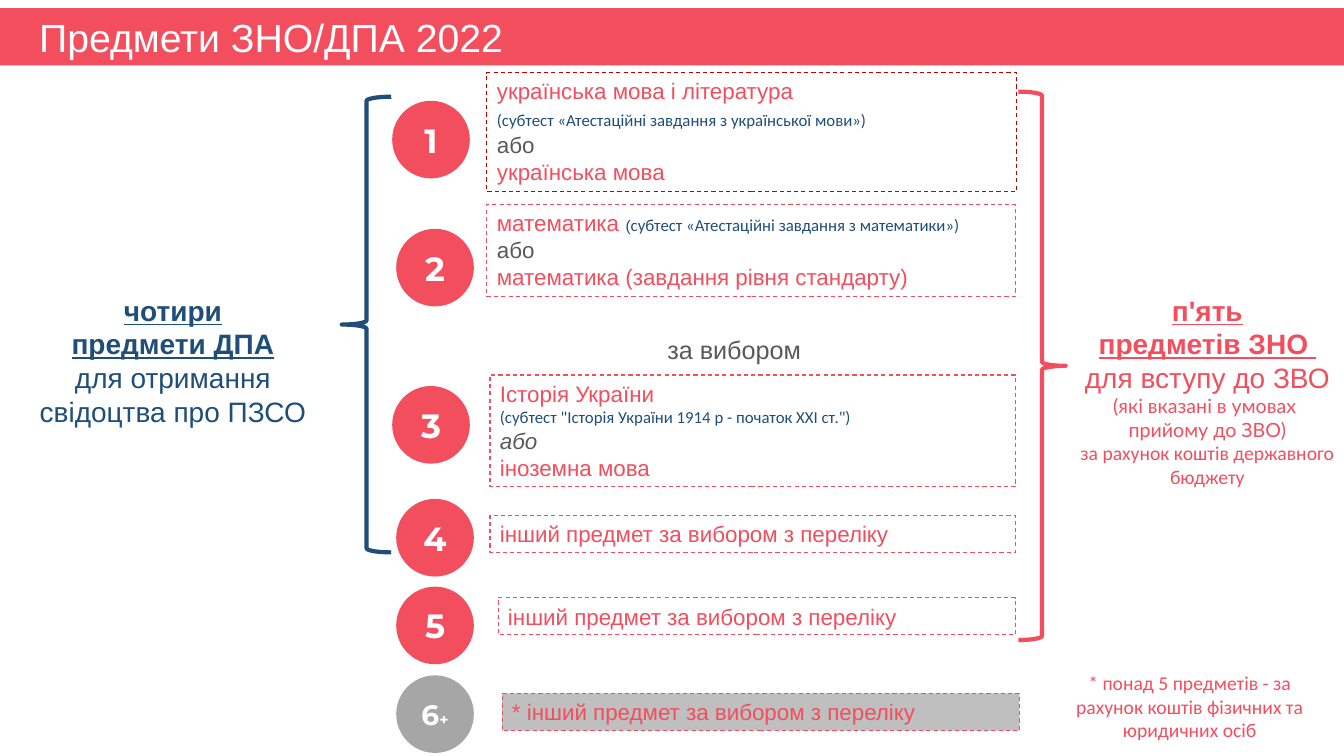
from collections import namedtuple

from lxml import etree
from pptx import Presentation
from pptx.dml.color import RGBColor
from pptx.enum import dml, shapes, text
from pptx.oxml import ns
from pptx.util import Inches, Pt

RED = RGBColor(0xF2, 0x4E, 0x5E)
DARK_RED = RGBColor(0xC0, 0x00, 0x00)
NAVY = RGBColor(0x1F, 0x4E, 0x79)
DARK_GRAY = RGBColor(0x59, 0x59, 0x59)
MID_GRAY = RGBColor(0xA6, 0xA6, 0xA6)
LIGHT_GRAY = RGBColor(0xBF, 0xBF, 0xBF)
WHITE = RGBColor(0xFF, 0xFF, 0xFF)

Style = namedtuple("Style", "size font color bold italic underline", defaults=(False, False, False))
TITLE = Style(28, "Arial", WHITE)
SUBJECT = Style(16, "Arial", RED)
OR = Style(16, "Arial", DARK_GRAY)
OR_ITALIC = OR._replace(italic=True)
SUBTEST = Style(12, "Calibri", NAVY)
CHOICE = Style(18, "Arial", DARK_GRAY)
DPA = Style(20, "Arial", NAVY)
DPA_HEAD = DPA._replace(bold=True, underline=True)
ZNO = Style(20, "Arial", RED)
ZNO_HEAD = ZNO._replace(bold=True, underline=True)
ZNO_NOTE = Style(14, "Lato", RED)
FOOTNOTE = Style(14, "Calibri", RED)
NUMBER = Style(24, "Montserrat", WHITE, bold=True)

# Text is a list of paragraphs, each a list of (words, style) runs.
OTHER_SUBJECT = [[("інший предмет за вибором з переліку", SUBJECT)]]

# left, top, width, height, line colour, line width, fill, text
SUBJECT_BOXES = [
    (4.83, 0.72, 5.25, 1.18, DARK_RED, 0, None, [
        [("українська мова і література", SUBJECT)],
        [("(субтест «Атестаційні завдання з української мови»)", SUBTEST), (" ", SUBJECT)],
        [("або", OR)],
        [("українська мова", SUBJECT)]]),
    (4.83, 2.03, 5.24, 0.91, RED, 0.75, None, [
        [("математика ", SUBJECT), ("(", Style(11, "Arial", NAVY)),
         ("субтест «Атестаційні завдання з математики»)", SUBTEST)],
        [("або", OR)],
        [("математика (завдання рівня стандарту)", SUBJECT)]]),
    (4.86, 3.72, 5.21, 1.11, RED, 0.75, None, [
        [("Історія України", SUBJECT)],
        [('(субтест "Історія України 1914 р - початок ХХІ ст.")', SUBTEST)],
        [("або", OR_ITALIC)],
        [("іноземна мова", SUBJECT)]]),
    (4.86, 5.11, 5.21, 0.37, RED, 0.75, None, OTHER_SUBJECT),
    (4.94, 5.93, 5.13, 0.37, RED, 0.75, None, OTHER_SUBJECT),
    (4.98, 6.88, 5.13, 0.37, RED, 0.75, LIGHT_GRAY,
     [[("* інший предмет за вибором з переліку", SUBJECT)]]),
]

# left, top, fill, runs
CIRCLE_SIZE = 0.77
CIRCLES = [
    (3.89, 1.00, RED, [("1", NUMBER)]),
    (3.93, 2.27, RED, [("2", NUMBER)]),
    (3.89, 3.83, RED, [("3", NUMBER)]),
    (3.93, 4.95, RED, [("4", NUMBER)]),
    (3.93, 5.82, RED, [("5", NUMBER)]),
    (3.93, 6.70, MID_GRAY, [("6", NUMBER._replace(size=20)), ("+", NUMBER._replace(size=11))]),
]

BRACES = [
    (shapes.MSO_SHAPE.LEFT_BRACE, (3.39, 0.96, 0.49, 4.52), NAVY),
    (shapes.MSO_SHAPE.RIGHT_BRACE, (10.1, 0.91, 0.47, 5.44), RED),
]

# place, wrap, text
LABELS = [
    ((0.16, 2.86, 3.11, 1.45), True, [
        [("чотири", DPA_HEAD)],
        [("предмети ДПА", DPA_HEAD)],
        [("для отримання свідоцтва про ПЗСО", DPA)]]),
    ((10.34, 2.86, 3.27, 2.05), True, [
        [("п'ять", ZNO_HEAD)],
        [("предметів ЗНО ", ZNO_HEAD)],
        [("для вступу до ЗВО", ZNO)],
        [("(які вказані в умовах ", ZNO_NOTE)],
        [("прийому до ЗВО)", ZNO_NOTE)],
        [("за рахунок коштів державного бюджету", FOOTNOTE)]]),
    ((6.52, 3.27, 1.53, 0.4), False, [[("за вибором", CHOICE)]]),
    ((10.36, 6.61, 2.88, 0.81), True, [
        [("* понад 5 предметів - за рахунок коштів фізичних та юридичних осіб", FOOTNOTE)]]),
]


def write(shape, paragraphs, align, anchor=text.MSO_ANCHOR.TOP, wrap=True, grow=True):
    frame = shape.text_frame
    frame.word_wrap = wrap
    frame.vertical_anchor = anchor
    fit = text.MSO_AUTO_SIZE
    frame.auto_size = fit.SHAPE_TO_FIT_TEXT if grow else fit.NONE
    for index, runs in enumerate(paragraphs):
        paragraph = frame.add_paragraph() if index else frame.paragraphs[0]
        paragraph.alignment = align
        for words, style in runs:
            run = paragraph.add_run()
            run.text = words
            font = run.font
            font.size, font.name = Pt(style.size), style.font
            font.color.rgb = style.color
            font.bold, font.italic, font.underline = style.bold, style.italic, style.underline
            for tag in ("a:ea", "a:cs"):
                etree.SubElement(run._r.get_or_add_rPr(), ns.qn(tag)).set("typeface", style.font)


def add_shape(slide, kind, place, fill=None, line=None, width=0.75, dashed=False):
    shape = slide.shapes.add_shape(kind, *map(Inches, place))
    shape.shadow.inherit = False
    if fill is None:
        shape.fill.background()
    else:
        shape.fill.solid()
        shape.fill.fore_color.rgb = fill
    if line is None:
        shape.line.fill.background()
    else:
        shape.line.color.rgb = line
        shape.line.width = Pt(width)
        if dashed:
            shape.line.dash_style = dml.MSO_LINE.DASH
    return shape


def main():
    presentation = Presentation()
    presentation.slide_width, presentation.slide_height = Inches(13.33), Inches(7.5)
    slide = presentation.slides.add_slide(presentation.slide_layouts[6])
    left, center = text.PP_ALIGN.LEFT, text.PP_ALIGN.CENTER
    rectangle, oval = shapes.MSO_SHAPE.RECTANGLE, shapes.MSO_SHAPE.OVAL

    title = add_shape(slide, rectangle, (0, 0.08, 13.33, 0.57), RED)
    write(title, [[("Предмети ЗНО/ДПА 2022", TITLE)]], left)
    properties = title.text_frame.paragraphs[0]._p.get_or_add_pPr()
    properties.set("marL", str(Inches(0.49)))
    properties.set("indent", str(Inches(-0.2)))

    for kind, place, color in BRACES:
        add_shape(slide, kind, place, line=color, width=3)

    for *place, line, width, fill, paragraphs in SUBJECT_BOXES:
        write(add_shape(slide, rectangle, place, fill, line, width, dashed=True), paragraphs, left)

    for x, y, fill, runs in CIRCLES:
        circle = add_shape(slide, oval, (x, y, CIRCLE_SIZE, CIRCLE_SIZE), fill)
        write(circle, [runs], center, text.MSO_ANCHOR.MIDDLE, grow=False)

    for place, wrap, paragraphs in LABELS:
        label = slide.shapes.add_textbox(*map(Inches, place))
        write(label, paragraphs, center if wrap else left, wrap=wrap)

    presentation.save("out.pptx")


if __name__ == "__main__":
    main()
